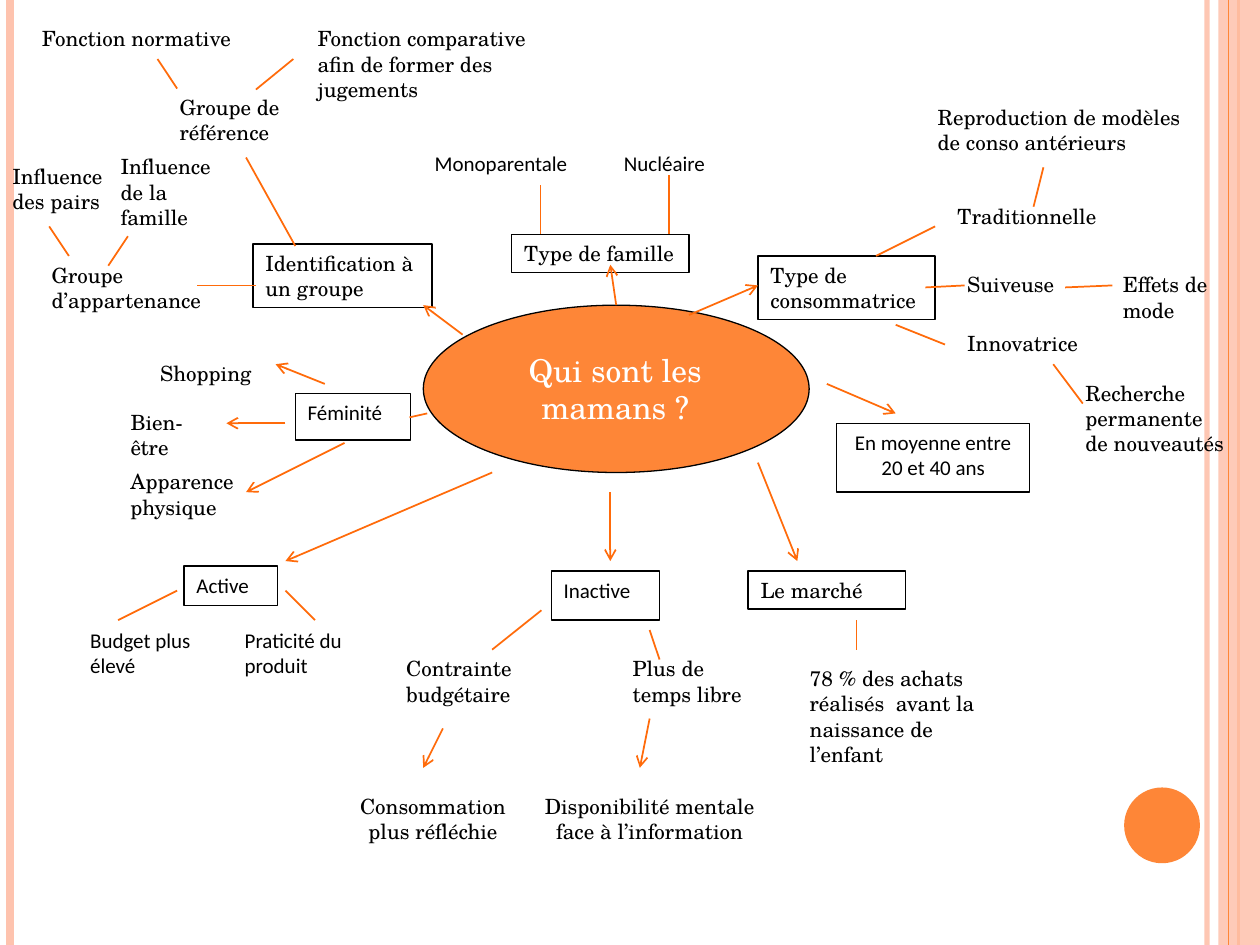
from lxml.etree import SubElement
from pptx import Presentation
from pptx.dml.color import RGBColor
from pptx.enum.shapes import MSO_CONNECTOR, MSO_SHAPE
from pptx.enum.text import MSO_ANCHOR, MSO_AUTO_SIZE, PP_ALIGN
from pptx.oxml.ns import qn
from pptx.util import Inches, Pt

WIDTH, HEIGHT = 10, 7.5
COLUMNS, ROWS = 128, 96
SERIF, SANS = "TeX Gyre Schola", "Calibri"
COLORS = {"orange": "FE8637", "link": "FF6B0A", "peach": "FEC3AE",
          "black": "000000", "white": "FFFFFF"}

# Vertical rules of the theme: x in inches, colour, width in points, opacity in %
RULES = [(9.58, "peach", 3, 93), (0.08, "peach", 4.5, 100), (9.83, "orange", 1.5, 100)]
BAND = (9.67, 0.33, 87)
INNER_RULE = (9.75, "orange", 0.75, 100)

# All places below are in grid columns and rows.
DISC = (114.2, 80, 7.7, 7.7)
CENTRE = (43, 31, 39.2, 17)
TITLE = ("Qui sont les mamans ?", 52, 35, 21, 9.1)

# White boxes: text, column, row, width, height, font, centred, framed
BOXES = [
    ("Praticité du produit", 23.6, 63.1, 12.4, 6.9, SANS, False, False),
    ("Budget plus élevé", 7.9, 63.1, 13, 6.9, SANS, False, False),
    ("Féminité", 30, 40, 11.7, 4.7, SANS, False, True),
    ("Monoparentale", 42.9, 14.7, 16.1, 4, SANS, False, False),
    ("Nucléaire", 60, 14.7, 15, 4, SANS, True, False),
    ("Consommation plus réfléchie", 35, 80, 18, 6.1, SERIF, True, False),
    ("Disponibilité mentale face à l’information", 54, 80, 24, 7, SERIF, True, False),
    ("En moyenne entre 20 et 40 ans", 85, 43, 19.6, 7, SANS, True, True),
    ("Inactive", 56, 58, 11, 5, SANS, False, True),
    ("Active", 18.7, 57.5, 9.5, 4, SANS, False, True),
]

# Labels without fill: text, column, row, width, number of lines
LABELS = [
    ("Contrainte budgétaire", 40, 66, 16, 2),
    ("Plus de temps libre", 63, 66, 16, 2),
    ("Shopping", 15, 36, 12, 1),
    ("Bien-être", 12, 41, 10.6, 2),
    ("Apparence physique", 12, 47, 14, 2),
    ("Innovatrice", 97, 33, 15, 1),
    ("Traditionnelle", 96, 20, 17, 1),
    ("Reproduction de modèles de conso antérieurs", 94, 10, 28, 2),
    ("Suiveuse", 97, 27, 15, 1),
    ("Recherche permanente de nouveautés", 109, 38, 17, 3),
    ("Effets de mode", 112.8, 27, 12.3, 2),
    ("78 % des achats réalisés  avant la naissance de l’enfant", 81, 67, 21, 4),
    ("Influence des pairs", 0, 16, 12, 2),
    ("Groupe d’appartenance", 4, 26, 18, 2),
    ("Influence de la famille", 11, 15, 12, 3),
    ("Groupe de référence", 17, 9, 17, 2),
    ("Fonction normative", 3, 2, 22.2, 1),
    ("Fonction comparative afin de former des jugements", 31, 2, 26, 3),
]
FRAMED_LABELS = [
    ("Le marché", 76, 58, 16, 1),
    ("Type de famille", 52, 23.8, 18, 1),
    ("Type de consommatrice", 77, 26, 18, 2),
    ("Identification à un groupe", 25.7, 24.8, 18.2, 2),
]

# Start column, start row, end column, end row
ARROWS = [
    (45, 74, 43, 78), (66, 73, 65, 78), (33, 39, 28, 37), (62, 50, 62, 57),
    (50, 48, 29, 57), (84, 39, 91, 42), (29, 43, 23, 43), (35, 45, 25, 50),
    (77, 47, 81, 57), (70, 32, 77, 29), (62.6, 31, 62, 26.9), (47, 34, 43, 31),
]
LINKS = [
    (66, 64, 67, 67), (55, 62, 50, 66), (18, 60, 12, 63), (29, 60, 32, 63),
    (95, 23, 89, 26), (96, 35, 91, 33), (41.6, 42.4, 43.4, 42), (106, 17, 105, 21),
    (98, 29, 94, 29.2), (68, 17.8, 68, 23.8), (54.9, 23.8, 54.9, 18.8),
    (107, 37, 110, 41), (87, 63, 87, 66), (113, 29, 108.2, 29.2), (26, 29, 20, 29),
    (5, 23, 7, 26), (13, 24, 11, 27), (25, 16, 30, 25), (16, 6, 18, 9),
    (29.8, 6, 26, 9.1),
]

prs = Presentation()
prs.slide_width, prs.slide_height = Inches(WIDTH), Inches(HEIGHT)
slide = prs.slides.add_slide(prs.slide_layouts[6])


def rgb(name):
    return RGBColor.from_string(COLORS[name])


def cells(*values):
    """Turn grid steps into lengths; columns and rows have the same step."""
    return [Inches(v * WIDTH / COLUMNS) for v in values]


def label_height(lines):
    """Height in grid rows of a 12 pt label with its margins."""
    return (0.1 + 0.203 * lines) * ROWS / HEIGHT


def set_opacity(sp, percent):
    if percent < 100:
        color = next(sp._element.spPr.iter(qn("a:srgbClr")))
        SubElement(color, qn("a:alpha"), val=str(percent * 1000))


def add_line(ends, color, width, opacity=100, arrow=False):
    line = slide.shapes.add_connector(MSO_CONNECTOR.STRAIGHT, *ends)
    line.line.color.rgb = rgb(color)
    line.line.width = Pt(width)
    set_opacity(line, opacity)
    if arrow:
        SubElement(line.line._get_or_add_ln(), qn("a:tailEnd"), type="arrow")
    SubElement(line._element.spPr, qn("a:effectLst"))


def add_rule(x, color, width, opacity):
    add_line((Inches(x), 0, Inches(x), Inches(HEIGHT)), color, width, opacity)


def add_shape(kind, place, fill=None, framed=False):
    sp = slide.shapes.add_shape(kind, *place)
    sp.shadow.inherit = False
    if fill:
        sp.fill.solid()
        sp.fill.fore_color.rgb = rgb(fill)
    else:
        sp.fill.background()
    if framed:
        sp.line.color.rgb = rgb("black")
        sp.line.width = Pt(0.75)
    else:
        sp.line.fill.background()
    return sp


def write(sp, text, size=12, font=SERIF, color="black", centred=False, after=0, grow=True):
    tf = sp.text_frame
    tf.word_wrap = True
    tf.vertical_anchor = MSO_ANCHOR.TOP
    tf.auto_size = MSO_AUTO_SIZE.SHAPE_TO_FIT_TEXT if grow else MSO_AUTO_SIZE.NONE
    p = tf.paragraphs[0]
    p.alignment = PP_ALIGN.CENTER if centred else PP_ALIGN.LEFT
    p.space_after = Pt(after)
    r = p.add_run()
    r.text = text
    r.font.size, r.font.name = Pt(size), font
    r.font.color.rgb = rgb(color)


for rule in RULES:
    add_rule(*rule)
band_x, band_width, band_opacity = BAND
band = add_shape(MSO_SHAPE.RECTANGLE,
                 (Inches(band_x), 0, Inches(band_width), Inches(HEIGHT)), "peach")
set_opacity(band, band_opacity)
add_rule(*INNER_RULE)
add_shape(MSO_SHAPE.OVAL, cells(*DISC), "orange")
add_shape(MSO_SHAPE.OVAL, cells(*CENTRE), "orange", framed=True)

for text, x, y, w, h, font, centred, framed in BOXES:
    box = add_shape(MSO_SHAPE.RECTANGLE, cells(x, y, w, h), "white", framed)
    write(box, text, font=font, centred=centred, after=10, grow=False)

title, *title_place = TITLE
write(slide.shapes.add_textbox(*cells(*title_place)), title,
      size=18, color="white", centred=True)

for text, x, y, w, lines in LABELS:
    write(slide.shapes.add_textbox(*cells(x, y, w, label_height(lines))), text)
for text, x, y, w, lines in FRAMED_LABELS:
    place = cells(x, y, w, label_height(lines))
    write(add_shape(MSO_SHAPE.RECTANGLE, place, framed=True), text)

for ends in ARROWS:
    add_line(cells(*ends), "link", 1, arrow=True)
for ends in LINKS:
    add_line(cells(*ends), "link", 1)

prs.save("out.pptx")
